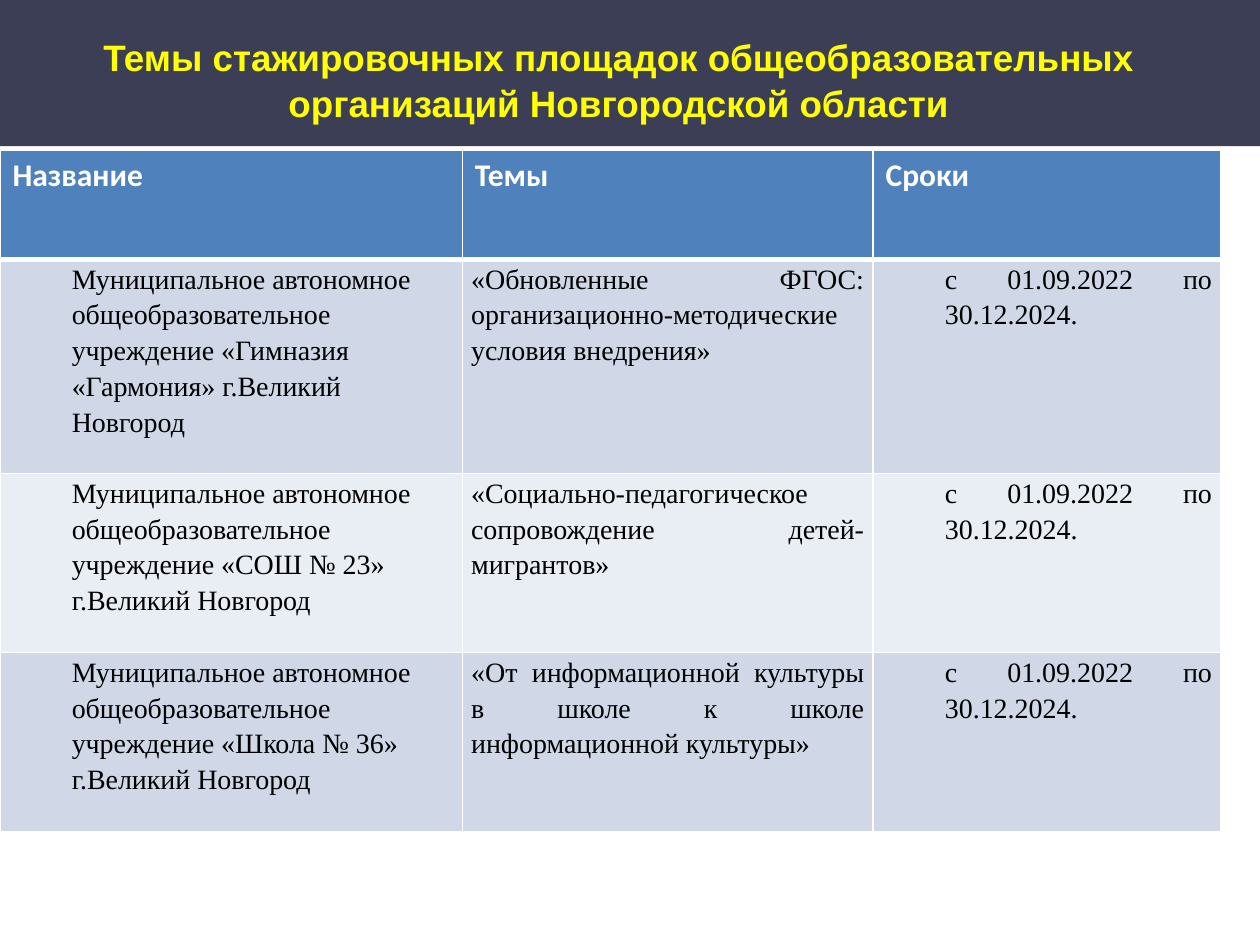
from dataclasses import dataclass

from lxml.etree import SubElement
from pptx import Presentation
from pptx.dml.color import RGBColor
from pptx.enum.shapes import MSO_SHAPE
from pptx.enum.text import MSO_ANCHOR, PP_ALIGN as Align
from pptx.oxml.ns import qn
from pptx.util import Inches, Pt

COLORS = {
    "band": "3B3E54", "title": "FFFF00", "header": "4F81BD", "white": "FFFFFF",
    "black": "000000", "odd": "D0D8E8", "even": "E9EDF4",
}
SLIDE_W, SLIDE_H = 10, 7.5
BAND_H = 1.16
TABLE_TOP = 1.19
COL_WIDTHS = (3.67, 3.26, 2.76)
ROW_HEIGHTS = (0.87, 1.7, 1.42, 1.42)


@dataclass(frozen=True)
class Style:
    font: str
    size: float
    color: str
    bold: bool = False
    align: Align = Align.LEFT
    spacing: float = 1.0
    indent: float = 0


@dataclass(frozen=True)
class Site:
    name: str
    topic: str
    dates: str = "с 01.09.2022 по 30.12.2024."


TITLE = Style("Arial", 21, "title", True, Align.CENTER, 1.04)
HEADER = Style("Calibri", 18, "white", True)
BODY = ("Times New Roman", 16, "black", False)
BODY_STYLES = (
    Style(*BODY, Align.LEFT, 1.15, 0.5),
    Style(*BODY, Align.JUSTIFY, 1.15),
    Style(*BODY, Align.JUSTIFY, 1.15, 0.5),
)

HEADINGS = ("Название", "Темы", "Сроки")
SCHOOL = "Муниципальное автономное общеобразовательное учреждение"
SITES = (
    Site(f"{SCHOOL} «Гимназия «Гармония» г.Великий Новгород",
         "«Обновленные ФГОС: организационно-методические условия внедрения»"),
    Site(f"{SCHOOL} «СОШ № 23» г.Великий Новгород",
         "«Социально-педагогическое сопровождение детей-мигрантов»"),
    Site(f"{SCHOOL} «Школа № 36» г.Великий Новгород",
         "«От информационной культуры в школе к школе информационной культуры»"),
)


def rgb(name: str) -> RGBColor:
    return RGBColor.from_string(COLORS[name])


def write(tf, text: str, style: Style) -> None:
    tf.word_wrap = True
    tf.text = text
    p = tf.paragraphs[0]
    p.alignment = style.align
    p.line_spacing = style.spacing
    if style.indent:
        pPr = p._p.get_or_add_pPr()
        pPr.set("marL", str(Inches(style.indent)))
        pPr.set("indent", "0")
    for r in p.runs:
        r.font.name = style.font
        r.font.size = Pt(style.size)
        r.font.bold = style.bold
        r.font.color.rgb = rgb(style.color)


def set_borders(cell, bottom: float) -> None:
    tcPr = cell._tc.get_or_add_tcPr()
    for side, width in (("L", 1), ("R", 1), ("T", 1), ("B", bottom)):
        ln = SubElement(tcPr, qn(f"a:ln{side}"), w=str(Pt(width)))
        fill = SubElement(ln, qn("a:solidFill"))
        SubElement(fill, qn("a:srgbClr"), val=COLORS["white"])


def fill_cell(cell, text: str, style: Style, fill: str, bottom: float = 1) -> None:
    write(cell.text_frame, text, style)
    set_borders(cell, bottom)
    cell.fill.solid()
    cell.fill.fore_color.rgb = rgb(fill)


def add_title(slide) -> None:
    band = slide.shapes.add_shape(
        MSO_SHAPE.RECTANGLE, 0, 0, Inches(SLIDE_W), Inches(BAND_H))
    band.shadow.inherit = False
    band.fill.solid()
    band.fill.fore_color.rgb = rgb("band")
    band.line.fill.background()

    box = slide.shapes.add_textbox(
        Inches(0.13), Inches(0.26), Inches(9.56), Inches(1.06))
    tf = box.text_frame
    tf.margin_left = tf.margin_right = tf.margin_top = tf.margin_bottom = 0
    tf.vertical_anchor = MSO_ANCHOR.TOP
    write(tf, "Темы стажировочных площадок общеобразовательных "
              "организаций Новгородской области", TITLE)


def add_sites_table(slide) -> None:
    table = slide.shapes.add_table(
        len(ROW_HEIGHTS), len(COL_WIDTHS), 0, Inches(TABLE_TOP),
        Inches(sum(COL_WIDTHS)), Inches(sum(ROW_HEIGHTS))).table
    for column, width in zip(table.columns, COL_WIDTHS):
        column.width = Inches(width)
    for row, height in zip(table.rows, ROW_HEIGHTS):
        row.height = Inches(height)

    # Header row
    for col, heading in enumerate(HEADINGS):
        fill_cell(table.cell(0, col), heading, HEADER, "header", bottom=3)

    # Banded body rows
    for row, site in enumerate(SITES, start=1):
        fill = "odd" if row % 2 else "even"
        texts = (site.name, site.topic, site.dates)
        for col, (text, style) in enumerate(zip(texts, BODY_STYLES)):
            cell = table.cell(row, col)
            cell.margin_left = cell.margin_right = Inches(0.07)
            cell.margin_top = cell.margin_bottom = 0
            fill_cell(cell, text, style, fill)


def main() -> None:
    prs = Presentation()
    prs.slide_width, prs.slide_height = Inches(SLIDE_W), Inches(SLIDE_H)
    slide = prs.slides.add_slide(prs.slide_layouts[6])
    add_title(slide)
    add_sites_table(slide)
    prs.save("out.pptx")


if __name__ == "__main__":
    main()
